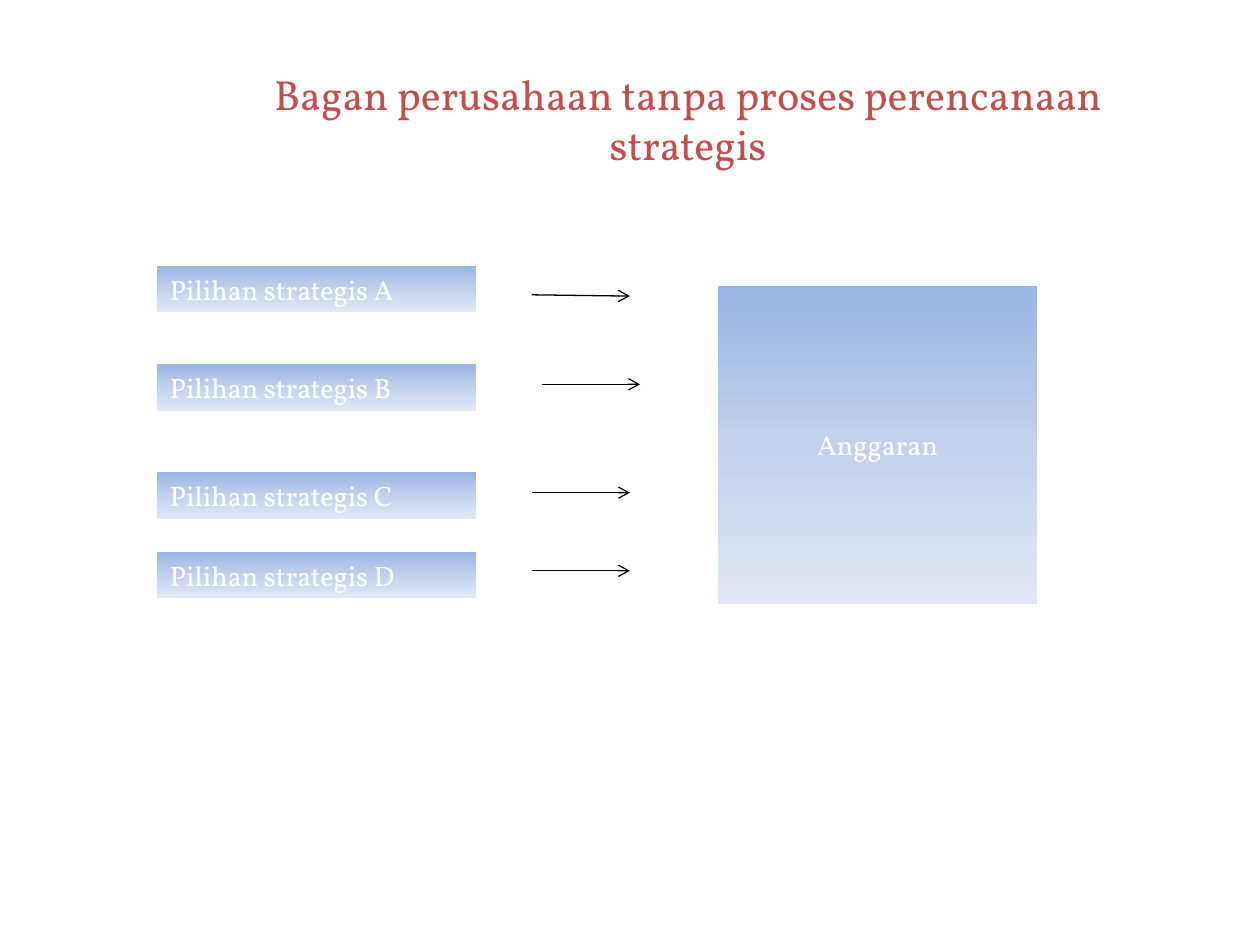
from copy import deepcopy

from lxml.etree import SubElement
from pptx import Presentation
from pptx.dml.color import RGBColor
from pptx.enum.shapes import MSO_CONNECTOR as Connector, MSO_SHAPE as Shape
from pptx.enum.text import MSO_ANCHOR as Anchor, PP_ALIGN as Align
from pptx.oxml.ns import qn
from pptx.util import Inches, Pt

# Content
TITLE = "Bagan perusahaan tanpa proses perencanaan strategis"
BUDGET = "Anggaran"
# label, box top, arrow left, arrow start height, arrow end height
OPTIONS = [
    ("Pilihan strategis A", 2.11, 4.22, 2.34, 2.35),
    ("Pilihan strategis B", 2.89, 4.30, 3.05, 3.05),
    ("Pilihan strategis C", 3.75, 4.22, 3.91, 3.91),
    ("Pilihan strategis D", 4.38, 4.22, 4.53, 4.53),
]

# Style
FONT = "Vollkorn"
COLORS = {"title": "C0504D", "label": "FFFFFF", "arrow": "000000",
          "top": "9AB5E4", "middle": "C2D1ED", "bottom": "E1E8F5"}
GRADIENT = [(0, "top"), (0.5, "middle"), (1, "bottom")]
BOX_LEFT, BOX_WIDTH, BOX_HEIGHT = 1.25, 2.53, 0.37
BUDGET_LEFT, BUDGET_TOP, BUDGET_HEIGHT = 5.7, 2.27, 2.52
ARROW_LENGTH = 0.78


def color(name):
    return RGBColor.from_string(COLORS[name])


def write(box, text, size, color_name, align):
    frame = box.text_frame
    frame.word_wrap = True
    frame.vertical_anchor = Anchor.MIDDLE
    para = frame.paragraphs[0]
    para.alignment = align
    span = para.add_run()
    span.text = text
    span.font.name = FONT
    span.font.size = Pt(size)
    span.font.color.rgb = color(color_name)


def add_gradient_box(page, left, top, height, text, align):
    box = page.shapes.add_shape(Shape.RECTANGLE, Inches(left), Inches(top),
                                Inches(BOX_WIDTH), Inches(height))
    box.shadow.inherit = False
    box.line.fill.background()
    box.fill.gradient()
    box.fill.gradient_angle = 270
    # A new gradient has two stops; add the third
    stop_list = box.element.spPr.find(".//" + qn("a:gsLst"))
    stop_list.append(deepcopy(stop_list[-1]))
    for stop, (position, name) in zip(box.fill.gradient_stops, GRADIENT):
        stop.position = position
        stop.color.rgb = color(name)
    write(box, text, 16, "label", align)


def add_arrow(page, left, start, end):
    arrow = page.shapes.add_connector(
        Connector.STRAIGHT, Inches(left), Inches(start),
        Inches(left + ARROW_LENGTH), Inches(end))
    arrow.line.color.rgb = color("arrow")
    arrow.line.width = Pt(0.75)
    SubElement(arrow.line._get_or_add_ln(), qn("a:tailEnd"), type="arrow")
    SubElement(arrow.element.spPr, qn("a:effectLst"))


def main():
    deck = Presentation()
    deck.slide_width, deck.slide_height = Inches(10), Inches(7.5)
    page = deck.slides.add_slide(deck.slide_layouts[6])

    # Title, centred right of a wide left margin
    title = page.shapes.add_textbox(Inches(0.75), Inches(0.33),
                                    Inches(8.5), Inches(1.22))
    title.text_frame.margin_left = Inches(1.02)
    write(title, TITLE, 24, "title", Align.CENTER)

    # Strategic options
    for label, top, *_ in OPTIONS:
        add_gradient_box(page, BOX_LEFT, top, BOX_HEIGHT, label, Align.LEFT)

    # Budget
    add_gradient_box(page, BUDGET_LEFT, BUDGET_TOP, BUDGET_HEIGHT,
                     BUDGET, Align.CENTER)

    # Arrows from the options to the budget
    for _, _, left, start, end in OPTIONS:
        add_arrow(page, left, start, end)

    deck.save("out.pptx")


if __name__ == "__main__":
    main()
